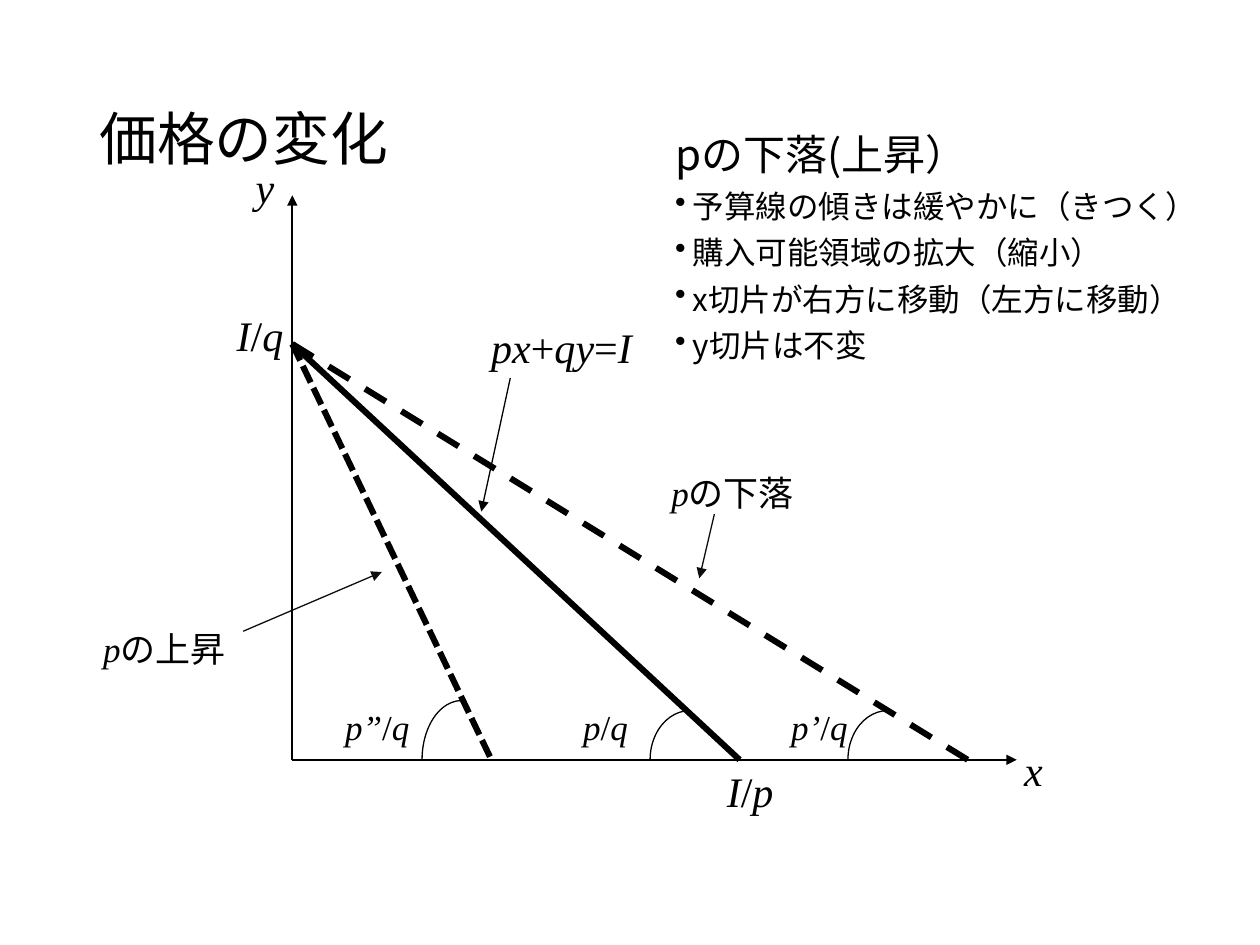
from pptx import Presentation
from pptx.dml.color import RGBColor
from pptx.enum.dml import MSO_LINE
from pptx.enum.shapes import MSO_CONNECTOR, MSO_SHAPE
from pptx.enum.text import MSO_ANCHOR
from pptx.oxml.ns import qn
from pptx.util import Inches, Pt
from lxml import etree

STRAIGHT = MSO_CONNECTOR.STRAIGHT
ARC = MSO_SHAPE.ARC
DASH, DOT = MSO_LINE.DASH, MSO_LINE.SQUARE_DOT
TOP, MIDDLE = MSO_ANCHOR.TOP, MSO_ANCHOR.MIDDLE
BLACK = RGBColor(0x00, 0x00, 0x00)
DARK = RGBColor(0x0D, 0x0D, 0x0D)
SERIF, CJK = "Times New Roman", "Noto Sans CJK JP"

COLS, ROWS = 100, 75
CELL = Inches(0.1)
ORIGIN_X, AXIS_Y = 23.2, 60.3
INTERCEPT_Y = 27.3

prs = Presentation()
prs.slide_width, prs.slide_height = COLS * CELL, ROWS * CELL
s = prs.slides.add_slide(prs.slide_layouts[6])


def add_text(box, paragraphs, size=24, fonts=(SERIF, SERIF), italic=True,
             anchor=TOP, spacing=None, bullet_size=18):
    tf = s.shapes.add_textbox(*[int(v * CELL) for v in box]).text_frame
    tf.word_wrap = True
    tf.vertical_anchor = anchor
    for n, text in enumerate(paragraphs):
        p = tf.paragraphs[0] if n == 0 else tf.add_paragraph()
        p.line_spacing = spacing
        if n:
            p.space_before = Pt(4.8)
            pPr = p._p.get_or_add_pPr()
            pPr.set("marL", str(Inches(0.14)))
            pPr.set("indent", str(-Inches(0.14)))
            etree.SubElement(pPr, qn("a:buChar"), char="•")
        for i, part in enumerate(text.split("|")):
            r = p.add_run()
            r.text = part
            r.font.size = Pt(bullet_size if n else size)
            r.font.name = fonts[i % 2]
            r.font.italic = italic and i % 2 == 0
            r.font.color.rgb = BLACK
            etree.SubElement(r._r.get_or_add_rPr(), qn("a:ea"), typeface=fonts[i % 2])


def add_line(x1, y1, x2, y2, width=0.75, color=BLACK, dash=None, arrow=False):
    c = s.shapes.add_connector(STRAIGHT, *[int(v * CELL) for v in (x1, y1, x2, y2)])
    c.line.width = Pt(width)
    c.line.color.rgb = color
    if dash:
        c.line.dash_style = dash
    if arrow:
        etree.SubElement(c.line._get_or_add_ln(), qn("a:tailEnd"), type="triangle")
    etree.SubElement(c._element.spPr, qn("a:effectLst"))


add_text((6.9, 4, 86.2, 14.5), ["価格の変化"], size=33, fonts=(CJK, CJK),
         italic=False, anchor=MIDDLE, spacing=0.9)

for x, y in [(ORIGIN_X, 15.5), (80.7, AXIS_Y)]:
    add_line(ORIGIN_X, AXIS_Y, x, y, width=1.25, arrow=True)

for x, dash in [(58.7, None), (76.8, DASH), (39, DOT)]:
    add_line(ORIGIN_X, INTERCEPT_Y, x, AXIS_Y, width=3.5, dash=dash)

for x, rise in [(51.6, 3.9), (67.3, 3.9), (33.5, 4.7)]:
    box = (x, AXIS_Y - rise, 6.3, 2 * rise)
    sp = s.shapes.add_shape(ARC, *[int(v * CELL) for v in box])
    sp.adjustments[0], sp.adjustments[1] = 108, 162
    sp.shadow.inherit = False
    sp.fill.background()
    sp.line.color.rgb = BLACK
    sp.line.width = Pt(0.75)

for x, y, w, label in [
    (80.3, 58.6, 3.9, "x"),
    (19.3, 12.3, 3.1, "y"),
    (38, 25, 14.2, "px|+|qy|=|I"),
    (56.7, 60.3, 6.3, "I|/|p"),
    (17.8, 24.1, 6.3, "I|/|q"),
]:
    add_text((x, y, w, 5), [label])

for x, w, label in [(45.3, 6.3, "p|/|q"), (61.8, 7.9, "p’|/|q"), (26.4, 7.9, "p”|/|q")]:
    add_text((x, 55.5, w, 4.3), [label], size=20)

for x, y, w, label in [(52.3, 36.9, 12.7, "p|の下落"), (7.2, 49.3, 12.1, "p|の上昇")]:
    add_text((x, y, w, 4.4), [label], size=20, fonts=(SERIF, CJK))

add_text((52.6, 9.7, 45.9, 23.2), [
    "pの下落(上昇）",
    "予算線の傾きは緩やかに（きつく）",
    "購入可能領域の拡大（縮小）",
    "x切片が右方に移動（左方に移動）",
    "y切片は不変",
], fonts=(CJK, CJK), italic=False)

for x1, y1, x2, y2, color in [
    (40.5, 30, 38.2, 40.6, BLACK),
    (56.7, 40.8, 55.5, 45.9, DARK),
    (19.3, 50.1, 30.3, 45.4, DARK),
]:
    add_line(x1, y1, x2, y2, color=color, arrow=True)

prs.save("out.pptx")
